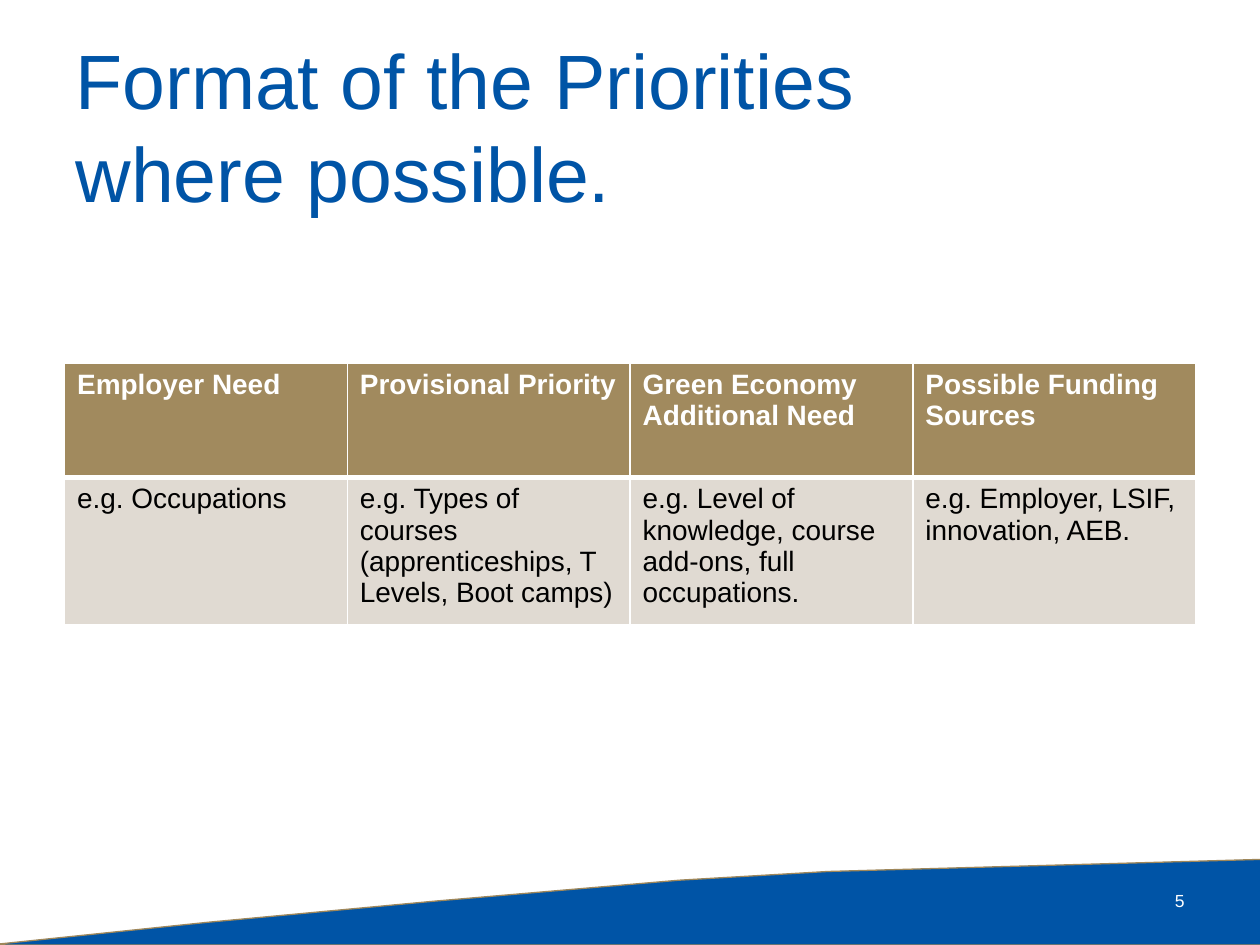
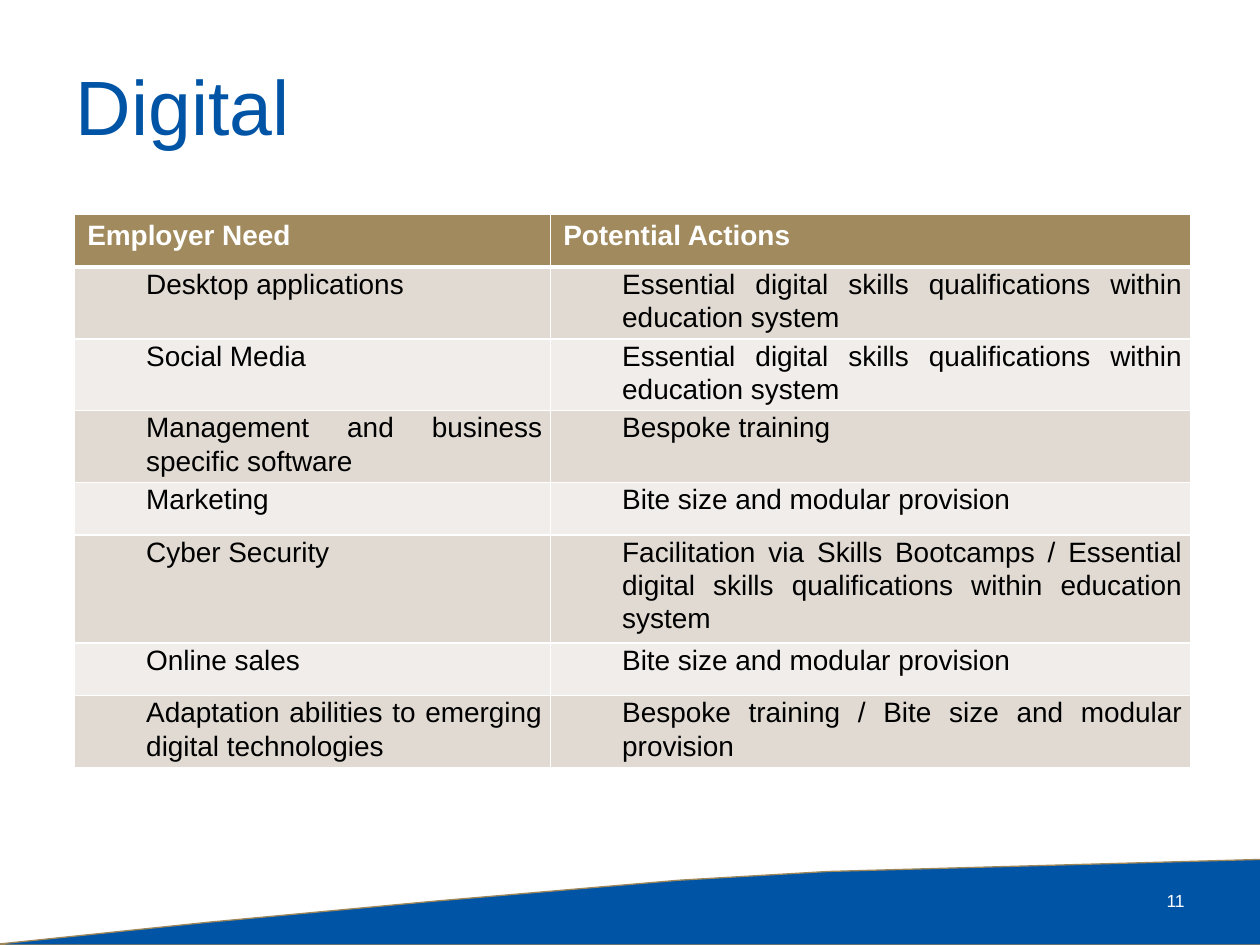
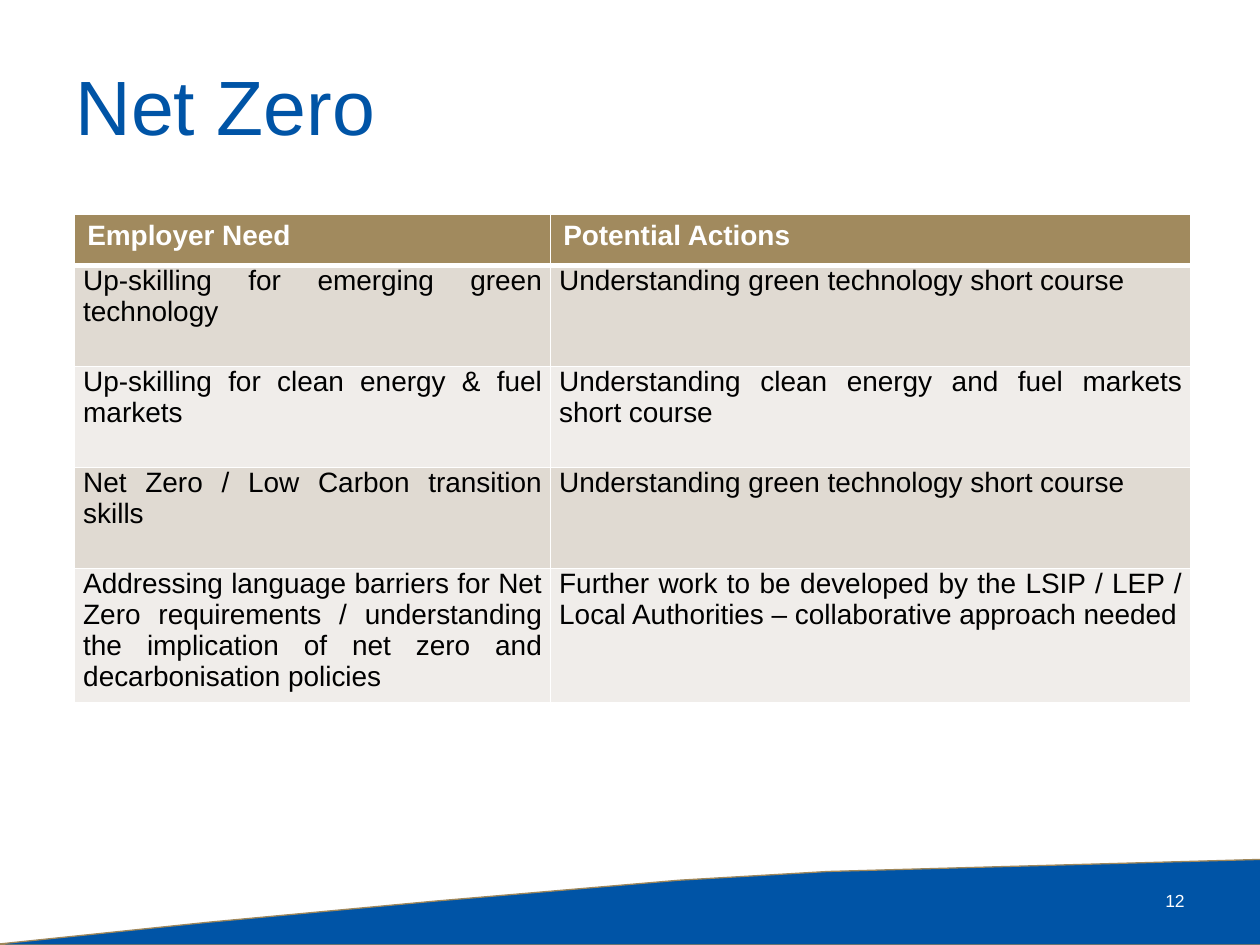
from lxml import etree
from pptx import Presentation
from pptx.dml.color import RGBColor
from pptx.enum import text
from pptx.oxml import ns
from pptx.util import Pt

COLORS = {
    "blue": "0054A6", "gold": "9F875A", "header": "A18A5E",
    "dark_band": "E0DAD2", "light_band": "F0EDEA", "white": "FFFFFF", "black": "000000",
}
FONTS = {
    "title": {"size": Pt(44), "color": "blue"},
    "number": {"size": Pt(10), "color": "white"},
    "header": {"size": Pt(16), "color": "white", "bold": True},
    "body": {"size": Pt(16), "color": "black", "bold": False},
}
WIDE_INSETS = (7.2, 3.6, 7.2, 3.6)
NARROW_INSETS = (4.9, 0, 4.9, 0)
PLAIN = {}
JUSTIFIED = {"alignment": text.PP_ALIGN.JUSTIFY}
SPACED = {**JUSTIFIED, "line_spacing": 1.07, "space_after": Pt(8)}
NEED_COLUMNS = (272, 365.8)
NEED_HEADER = ("Employer Need", "Potential Actions")
BAND_OUTLINE = [(724.3, 491), (473, 498.2), (388.1, 503.3), (248.4, 514.8),
                (118.8, 527), (-5.8, 540), (723.6, 540)]

SLIDES = [
    {
        "title": "Format of the Priorities\vwhere possible.", "title_top": 26.6, "number": "5",
        "origin": (36.9, 207.6), "columns": (161.6,) * 4, "heights": (65.2, 84),
        "insets": WIDE_INSETS, "paragraph": PLAIN, "indent": 0,
        "rows": [
            ("Employer Need", "Provisional Priority", "Green Economy Additional Need",
             "Possible Funding Sources"),
            ("e.g. Occupations",
             "e.g. Types of courses (apprenticeships, T Levels, Boot camps)",
             "e.g. Level of knowledge, course add-ons, full occupations.",
             "e.g. Employer, LSIF, innovation, AEB."),
        ],
    },
    {
        "title": "Digital", "title_top": 15, "number": "11",
        "origin": (42.7, 122.5), "columns": NEED_COLUMNS,
        "heights": (30, 40.5, 40.5, 40.5, 30, 61.7, 30, 40.5),
        "insets": NARROW_INSETS, "paragraph": SPACED, "indent": 36,
        "rows": [
            NEED_HEADER,
            ("Desktop applications",
             "Essential digital skills qualifications within education system"),
            ("Social Media", "Essential digital skills qualifications within education system"),
            ("Management and business specific software", "Bespoke training"),
            ("Marketing", "Bite size and modular provision"),
            ("Cyber Security",
             "Facilitation via Skills Bootcamps / Essential digital skills qualifications "
             "within education system"),
            ("Online sales", "Bite size and modular provision"),
            ("Adaptation abilities to emerging digital technologies",
             "Bespoke training / Bite size and modular provision"),
        ],
    },
    {
        "title": "Net Zero", "title_top": 15, "number": "12",
        "origin": (42.7, 122.5), "columns": NEED_COLUMNS,
        "heights": (29.2, 57.7, 57.7, 57.7, 76.5),
        "insets": NARROW_INSETS, "paragraph": JUSTIFIED, "indent": 0,
        "rows": [
            NEED_HEADER,
            ("Up-skilling for emerging green technology",
             "Understanding green technology short course"),
            ("Up-skilling for clean energy & fuel markets",
             "Understanding clean energy and fuel markets short course"),
            ("Net Zero / Low Carbon transition skills",
             "Understanding green technology short course"),
            ("Addressing language barriers for Net Zero requirements / understanding the "
             "implication of net zero and decarbonisation policies",
             "Further work to be developed by the LSIP / LEP / Local Authorities – "
             "collaborative approach needed"),
        ],
    },
]


def rgb(name):
    return RGBColor.from_string(COLORS[name])


def apply(target, values):
    for name, value in values.items():
        setattr(target, name, value)


def write(frame, content, font_key, paragraph_format):
    frame.text = content
    formats = dict(FONTS[font_key])
    color = rgb(formats.pop("color"))
    for paragraph in frame.paragraphs:
        apply(paragraph, paragraph_format)
        for run in paragraph.runs:
            apply(run.font, {"name": "Arial", **formats})
            run.font.color.rgb = color


def place(shape, *box):
    apply(shape, dict(zip(("left", "top", "width", "height"), map(Pt, box))))


def add_borders(cell, widths):
    properties = cell._tc.get_or_add_tcPr()
    for side, width in widths.items():
        line = etree.SubElement(properties, ns.qn(f"a:ln{side}"), w=str(Pt(width)))
        fill = etree.SubElement(line, ns.qn("a:solidFill"))
        etree.SubElement(fill, ns.qn("a:srgbClr"), val=COLORS["white"])


def add_band(slide):
    builder = slide.shapes.build_freeform(*BAND_OUTLINE[0], scale=Pt(1))
    builder.add_line_segments(BAND_OUTLINE[1:], close=True)
    band = builder.convert_to_shape()
    band.shadow.inherit = False
    band.fill.solid()
    band.fill.fore_color.rgb = rgb("blue")
    band.line.color.rgb = rgb("gold")
    band.line.width = Pt(0.75)


def add_title(slide, content, top):
    title = slide.shapes.title
    place(title, 36, top, 648, 90)
    apply(title.text_frame, {"vertical_anchor": text.MSO_ANCHOR.MIDDLE,
                             "auto_size": text.MSO_AUTO_SIZE.NONE, "word_wrap": True})
    write(title.text_frame, content, "title", {"alignment": text.PP_ALIGN.LEFT})


def add_number(slide, number):
    box = slide.shapes.add_textbox(Pt(516), Pt(500.4), Pt(168), Pt(28.8))
    apply(box.text_frame, {"vertical_anchor": text.MSO_ANCHOR.MIDDLE, "word_wrap": True})
    write(box.text_frame, number, "number", {"alignment": text.PP_ALIGN.RIGHT})


def fill_cell(cell, content, row_index, data):
    is_header = row_index == 0
    insets = WIDE_INSETS if is_header else data["insets"]
    sides = ("margin_left", "margin_top", "margin_right", "margin_bottom")
    apply(cell, dict(zip(sides, map(Pt, insets))))
    write(cell.text_frame, content, "header" if is_header else "body",
          PLAIN if is_header else data["paragraph"])
    if data["indent"] and not is_header:
        properties = cell.text_frame.paragraphs[0]._p.get_or_add_pPr()
        properties.set("marL", str(Pt(data["indent"])))
        properties.set("indent", "0")
    add_borders(cell, {"L": 1, "R": 1, "T": 3 if row_index == 1 else 1,
                       "B": 3 if is_header else 1})
    band = "dark_band" if row_index % 2 else "light_band"
    cell.fill.solid()
    cell.fill.fore_color.rgb = rgb("header" if is_header else band)


def add_table(slide, data):
    rows, columns, heights = data["rows"], data["columns"], data["heights"]
    box = (*data["origin"], sum(columns), sum(heights))
    table = slide.shapes.add_table(len(rows), len(columns), *map(Pt, box)).table
    for column, width in zip(table.columns, columns):
        column.width = Pt(width)
    for row_index, (row, height) in enumerate(zip(table.rows, heights)):
        row.height = Pt(height)
        for cell, content in zip(row.cells, rows[row_index]):
            fill_cell(cell, content, row_index, data)


def main():
    presentation = Presentation()
    apply(presentation, {"slide_width": Pt(720), "slide_height": Pt(540)})
    for data in SLIDES:
        slide = presentation.slides.add_slide(presentation.slide_layouts[5])
        add_band(slide)
        add_title(slide, data["title"], data["title_top"])
        add_number(slide, data["number"])
        add_table(slide, data)
    presentation.save("out.pptx")


if __name__ == "__main__":
    main()
